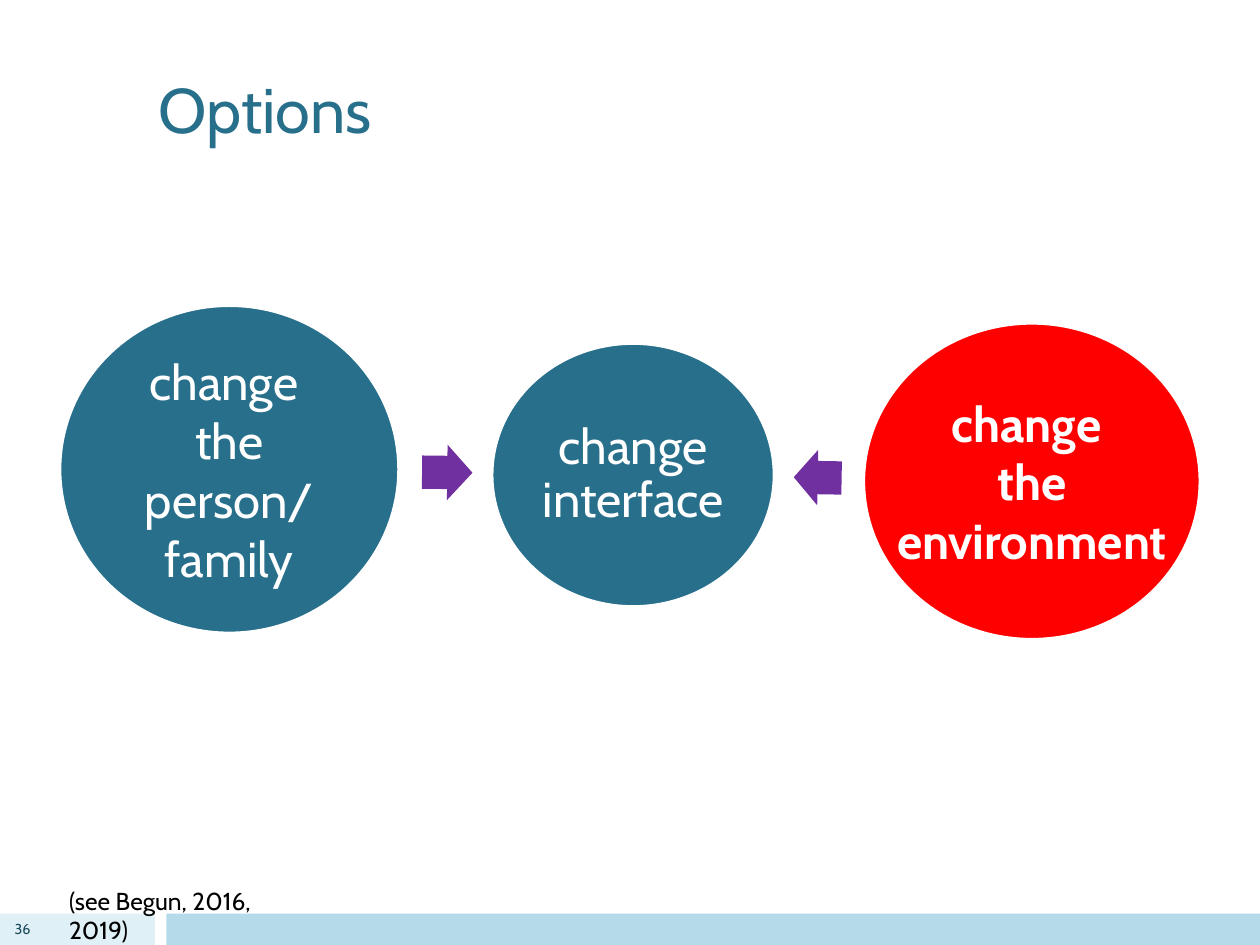
from pptx import Presentation
from pptx.dml.color import RGBColor
from pptx.enum.shapes import MSO_SHAPE as Shape
from pptx.enum.text import MSO_ANCHOR as Anchor, PP_ALIGN as Align
from pptx.util import Inches, Pt

COLUMNS, ROWS = 100, 75
TEAL, RED, PURPLE, WHITE = "276F8B", "FF0000", "7030A0", "FFFFFF"


def color(value):
    return RGBColor.from_string(value)


class SlideBuilder:
    """Draws styled elements on a slide, placed by grid columns and rows."""

    font_name = "Cabin"

    def __init__(self, presentation):
        self.slide = presentation.slides.add_slide(presentation.slide_layouts[6])
        self.column = presentation.slide_width / COLUMNS
        self.row = presentation.slide_height / ROWS

    def place(self, left, top, width, height):
        return (round(left * self.column), round(top * self.row),
                round(width * self.column), round(height * self.row))

    def shape(self, kind, box, fill, outline=None):
        shape = self.slide.shapes.add_shape(kind, *self.place(*box))
        shape.shadow.inherit = False
        shape.fill.solid()
        shape.fill.fore_color.rgb = color(fill)
        if outline:
            shape.line.color.rgb = color(outline)
            shape.line.width = Pt(1)
        else:
            shape.line.fill.background()
        return shape

    def text(self, box, lines, size, ink, align=Align.LEFT, anchor=Anchor.TOP,
             bold=False, spacing=None, inset=None):
        frame = self.slide.shapes.add_textbox(*self.place(*box)).text_frame
        frame.word_wrap = True
        frame.vertical_anchor = anchor
        if inset is not None:
            frame.margin_left = frame.margin_right = Inches(inset)
            frame.margin_top = frame.margin_bottom = Inches(inset)
        frame.text = "\n".join(lines)
        for paragraph in frame.paragraphs:
            paragraph.alignment = align
            paragraph.line_spacing = spacing
            paragraph.font.name = self.font_name
            paragraph.font.size = Pt(size)
            paragraph.font.bold = bold
            paragraph.font.color.rgb = color(ink)

    def disc(self, box, text_width, lines, fill=TEAL, bold=False, spacing=None):
        left, top, width, height = box
        self.shape(Shape.OVAL, box, fill, WHITE)
        text_box = (left + (width - text_width) / 2, top, text_width, height)
        self.text(text_box, lines, 28, WHITE, Align.CENTER, Anchor.MIDDLE,
                  bold, spacing, 0.04)

    def arrow(self, box, rotation):
        arrow = self.shape(Shape.RIGHT_ARROW, box, PURPLE)
        arrow.adjustments[0] = 0.6
        arrow.rotation = rotation


def main():
    presentation = Presentation()
    presentation.slide_width, presentation.slide_height = Inches(10), Inches(7.5)
    builder = SlideBuilder(presentation)

    builder.shape(Shape.RECTANGLE, (0, 72.5, 12.3, 2.5), "DFF0F6")
    builder.shape(Shape.RECTANGLE, (13.2, 72.5, 86.8, 2.5), "B5DBEA")
    builder.text((11.6, 5.1, 76.9, 12.9), ["Options"], 36, TEAL)

    builder.disc((4.8, 24.3, 26.8, 25.9), 19, ["change ", "the person/ family"])
    builder.arrow((33.5, 35.3, 4, 4.4), 0.7)
    builder.disc((39.1, 27.3, 22.3, 20.8), 15.8, ["change interface"], spacing=0.9)
    builder.arrow((63, 35.7, 3.8, 4.4), 181)
    builder.disc((68.6, 25.7, 26.6, 25), 22.6, ["change ", "the environment"],
                 RED, bold=True)

    builder.text((4.5, 69.8, 21.3, 3.4), ["(see Begun, 2016, 2019)"], 14, "000000")
    builder.text((0, 72.5, 3.4, 2.5), ["36"], 8.2, "1A4A5D", Align.RIGHT, Anchor.MIDDLE)
    presentation.save("out.pptx")


if __name__ == "__main__":
    main()
